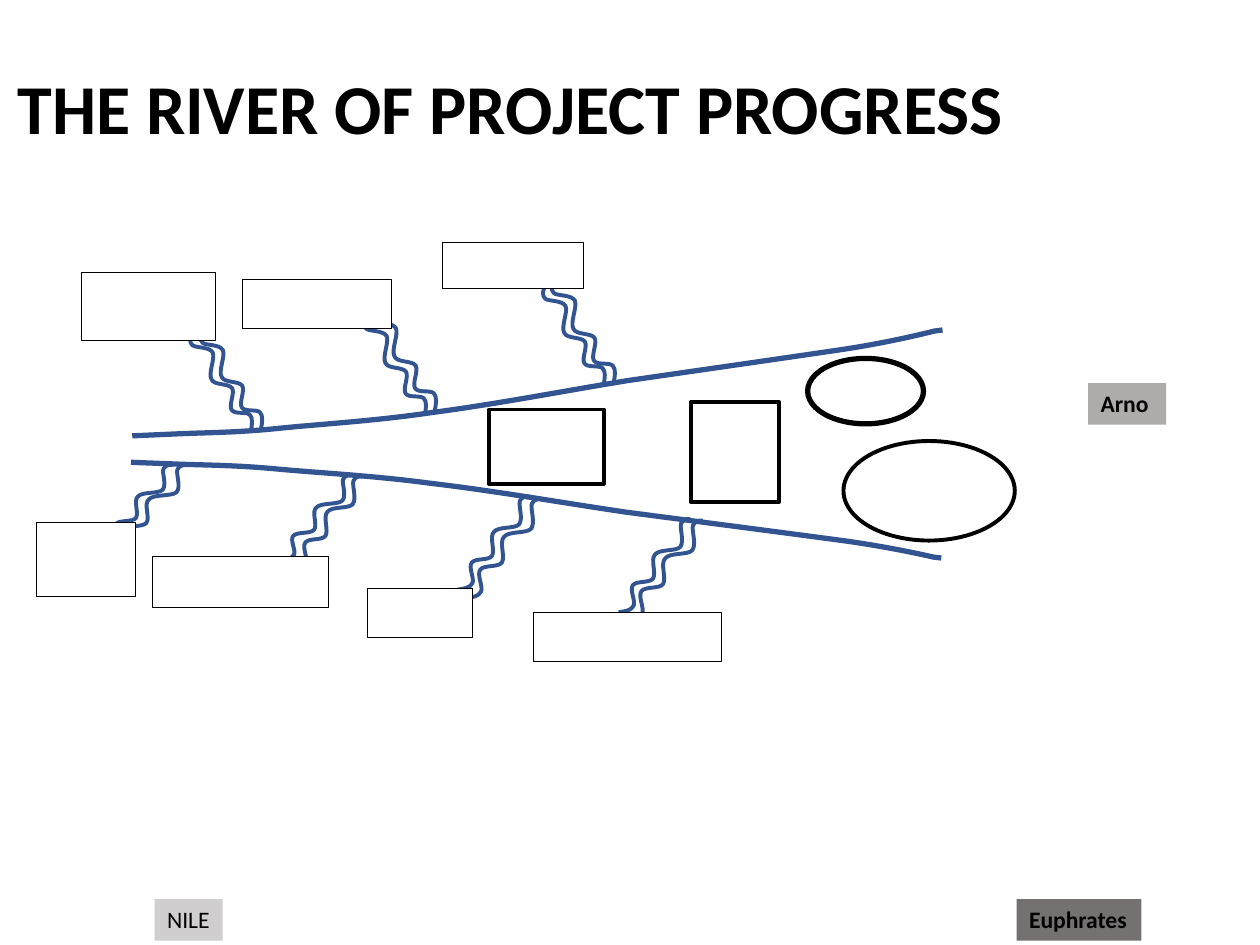
from typing import NamedTuple

from pptx import Presentation
from pptx import util as u
from pptx.dml import color
from pptx.enum import shapes, text
from pptx.oxml import ns

BLUE, BLACK, WHITE = "325491", "000000", "FFFFFF"
RECT, OVAL = shapes.MSO_SHAPE.RECTANGLE, shapes.MSO_SHAPE.OVAL
TILT = 287.4

# Outlines in a unit box: a start, then segments of one point (line) or three (curve).
BANK = [
    [(0, 1)], [(.06, .98)],
    [(.09, .97), (.13, .97), (.18, .93)],
    [(.23, .89), (.3, .86), (.37, .78)],
    [(.45, .7), (.53, .58), (.61, .48)],
    [(.7, .38), (.81, .26), (.88, .18)],
    [(.94, .11), (.99, .01), (.99, .01)],
    [(.99, .01)], [(1, 0)],
]
STREAM = [
    [(0, 1)],
    [(.09, .99), (.18, .98), (.21, .93)],
    [(.24, .88), (.15, .76), (.2, .71)],
    [(.25, .66), (.43, .69), (.48, .64)],
    [(.53, .58), (.44, .43), (.51, .38)],
    [(.57, .32), (.8, .35), (.86, .3)],
    [(.92, .24), (.85, .1), (.87, .05)],
    [(.9, 0), (.95, 0), (1, 0)],
]


class Curve(NamedTuple):
    x: float
    y: float
    w: float
    h: float
    rotation: float = 0
    segments: list = STREAM
    weight: float = 2.25
    flip: bool = False


class Node(NamedTuple):
    x: float
    y: float
    w: float
    h: float
    weight: float = 0.5
    kind: shapes.MSO_SHAPE = RECT
    fill: str | None = WHITE


class Label(NamedTuple):
    words: str
    x: float
    y: float
    w: float
    h: float
    fill: str | None = None
    size: float = 13.5
    bold: bool = True
    wrap: bool = False


# Back to front: each source box covers the ends of its streams.
RIVER = [
    Curve(75.6, 188.6, 463, 60.5, segments=BANK, weight=3),
    Curve(74.9, 264.2, 463, 54.7, segments=BANK, weight=3, flip=True),
    Curve(58.3, 265.7, 40.3, 47.5),
    Curve(61.9, 265.7, 45.4, 51.8),
    Node(20.9, 298.4, 56.5, 42.5),
    Curve(105.1, 194.4, 42.5, 49, TILT),
    Curve(110.9, 193, 42.5, 49, TILT),
    Node(46.4, 155.5, 77, 38.9),
    Curve(159.1, 271.4, 42.5, 49),
    Curve(166.3, 272.2, 41, 53.3),
    Node(87.1, 317.8, 100.8, 29.5),
    Curve(204.5, 185, 42.5, 49, TILT),
    Curve(311, 164.9, 44.6, 50.4, TILT),
    Curve(261.4, 283.7, 41, 53.3),
    Curve(265.7, 285.1, 43.9, 56.9),
    Node(210.2, 336.2, 59.8, 28.1),
    Curve(208.8, 180.7, 44.6, 50.4, TILT),
    Node(138.5, 159.8, 85, 28.1),
    Curve(306.7, 167.8, 42.5, 49, TILT),
    Node(252.7, 138.5, 80.6, 26.6),
    Curve(357.8, 297.4, 43.9, 56.9),
    Curve(353.5, 296.6, 41, 53.3),
    Node(304.6, 349.9, 107.6, 28.1),
    Node(279.4, 234, 65.5, 42.5, 2.25),
    Node(395, 229.5, 50, 57.6, 2.25),
    Node(461.5, 204.8, 66.2, 37.4, 3, OVAL, None),
    Node(482, 252, 97.9, 56.9, 2.25, OVAL, None),
]
LABELS = [
    Label("THE RIVER OF PROJECT PROGRESS", 2.9, 33.1, 583.9, 55.4,
          size=40, wrap=True),
    Label("Euphrates", 581, 513.8, 71.3, 23.8, "767171"),
    Label("Arno", 621.8, 218.9, 44.6, 23.8, "AFABAB", wrap=True),
    Label("NILE", 88.4, 513.8, 38.9, 23.8, "D0CECE", bold=False),
]


def paint(fmt, hex_color: str | None) -> None:
    """Give a fill a solid colour, or none."""
    if hex_color is None:
        fmt.background()
    else:
        fmt.solid()
        fmt.fore_color.rgb = color.RGBColor.from_string(hex_color)


def apply(target, formats: dict) -> None:
    for name, value in formats.items():
        setattr(target, name, value)


def outline(s, fill: str | None, line: str, weight: float) -> None:
    s.shadow.inherit = False
    paint(s.fill, fill)
    paint(s.line.fill, line)
    s.line.width = u.Pt(weight)


def place(part: Node | Label) -> list[u.Length]:
    return [u.Pt(v) for v in (part.x, part.y, part.w, part.h)]


def bend(s, segments: list) -> None:
    """Join the straight steps of each three-point segment into one Bézier curve."""
    steps = iter(list(s.element.iter(ns.qn("a:lnTo"))))
    for segment in segments[1:]:
        first, *others = [next(steps) for _ in segment]
        if others:
            first.tag = ns.qn("a:cubicBezTo")
        for step in others:
            first.append(step[0])
            step.getparent().remove(step)


def draw_curve(slide, c: Curve) -> None:
    points = [(u.Pt(c.x + x * c.w), u.Pt(c.y + (1 - y if c.flip else y) * c.h))
              for segment in c.segments for x, y in segment]
    builder = slide.shapes.build_freeform(*points[0])
    builder.add_line_segments(points[1:], close=False)
    s = builder.convert_to_shape()
    bend(s, c.segments)
    outline(s, None, BLUE, c.weight)
    s.rotation = c.rotation


def draw_node(slide, node: Node) -> None:
    s = slide.shapes.add_shape(node.kind, *place(node))
    outline(s, node.fill, BLACK, node.weight)


def draw_label(slide, label: Label) -> None:
    if label.fill:
        s = slide.shapes.add_shape(RECT, *place(label))
        s.shadow.inherit = False
        s.line.fill.background()
    else:
        s = slide.shapes.add_textbox(*place(label))
    paint(s.fill, label.fill)
    tf = s.text_frame
    apply(tf, {"word_wrap": label.wrap,
               "auto_size": text.MSO_AUTO_SIZE.SHAPE_TO_FIT_TEXT,
               "vertical_anchor": text.MSO_ANCHOR.TOP})
    p = tf.paragraphs[0]
    p.alignment = text.PP_ALIGN.LEFT
    r = p.add_run()
    r.text = label.words
    apply(r.font, {"name": "Calibri", "size": u.Pt(label.size), "bold": label.bold})
    paint(r.font.fill, BLACK)


def main() -> None:
    prs = Presentation()
    apply(prs, {"slide_width": u.Pt(720), "slide_height": u.Pt(540)})
    slide = prs.slides.add_slide(prs.slide_layouts[6])
    for part in RIVER:
        draw = draw_curve if isinstance(part, Curve) else draw_node
        draw(slide, part)
    for label in LABELS:
        draw_label(slide, label)
    prs.save("out.pptx")


if __name__ == "__main__":
    main()
